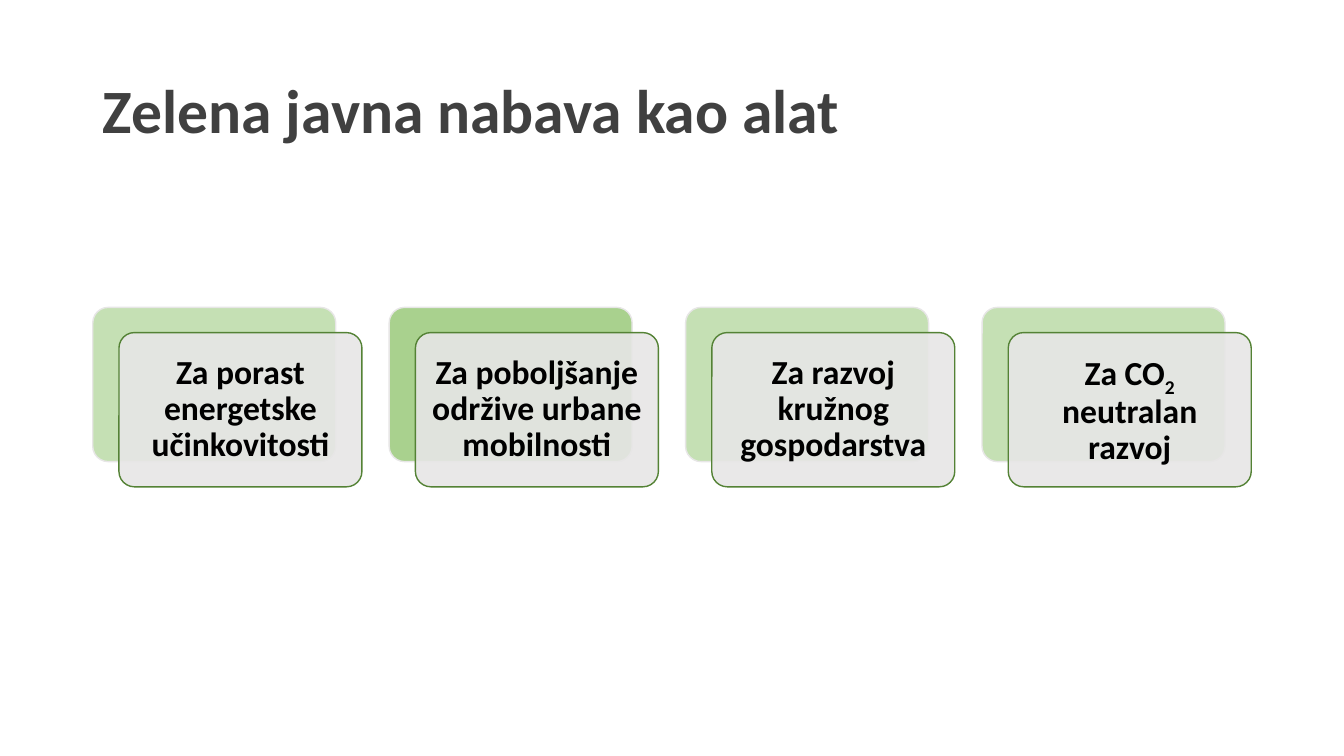
from lxml import etree
from pptx import Presentation
from pptx.dml.color import RGBColor
from pptx.enum.shapes import MSO_SHAPE
from pptx.enum.text import MSO_ANCHOR, PP_ALIGN
from pptx.oxml.ns import qn
from pptx.util import Emu, Pt

CARD_W, CARD_H = 241, 153
CARD_LEFT, CARD_TOP, CARD_STEP = 92, 305, 294
FRONT_DX, FRONT_DY = 26, 25
LIGHT_GREEN, MID_GREEN, DARK_GREEN = "C5E0B4", "A9D18E", "548235"
GRAY = "E7E6E6"
# Each card: back colour and text parts; every second part is a subscript.
CARDS = [
    (LIGHT_GREEN, ["Za porast energetske učinkovitosti"]),
    (MID_GREEN, ["Za poboljšanje održive urbane mobilnosti"]),
    (LIGHT_GREEN, ["Za razvoj kružnog gospodarstva"]),
    (LIGHT_GREEN, ["Za CO", "2", " neutralan razvoj"]),
]


def px(n):
    """Turn px (100 to the inch) into EMU."""
    return Emu(n * 9144)


def rgb(code):
    return RGBColor.from_string(code)


def format_run(r, size, color):
    r.font.name = "Calibri"
    r.font.size = Pt(size)
    r.font.bold = True
    r.font.color.rgb = rgb(color)


def add_title(s, text):
    title = s.shapes.title
    title.left, title.top, title.width, title.height = px(92), px(40), px(932), px(145)
    tf = title.text_frame
    tf.text = text
    tf.vertical_anchor = MSO_ANCHOR.MIDDLE
    p = tf.paragraphs[0]
    p.alignment = PP_ALIGN.LEFT
    p.line_spacing = 0.9
    format_run(p.runs[0], 44, "404040")


def add_panel(s, left, top, fill, line):
    sp = s.shapes.add_shape(MSO_SHAPE.ROUNDED_RECTANGLE,
                            px(left), px(top), px(CARD_W), px(CARD_H))
    sp.adjustments[0] = 0.1
    sp.shadow.inherit = False
    sp.fill.solid()
    sp.fill.fore_color.rgb = rgb(fill)
    sp.line.color.rgb = rgb(line)
    sp.line.width = Pt(1)
    return sp


def set_opacity(sp, percent):
    color = sp.fill._xPr.find(qn("a:solidFill"))[0]
    etree.SubElement(color, qn("a:alpha")).set("val", str(percent * 1000))


def add_card(s, left, back, parts):
    add_panel(s, left, CARD_TOP, back, GRAY)
    front = add_panel(s, left + FRONT_DX, CARD_TOP + FRONT_DY, GRAY, DARK_GREEN)
    set_opacity(front, 90)
    tf = front.text_frame
    tf.word_wrap = True
    tf.vertical_anchor = MSO_ANCHOR.MIDDLE
    tf.margin_left = tf.margin_right = tf.margin_top = tf.margin_bottom = px(10)
    p = tf.paragraphs[0]
    p.alignment = PP_ALIGN.CENTER
    p.line_spacing = 0.9
    for i, part in enumerate(parts):
        r = p.add_run()
        r.text = part
        format_run(r, 24, "000000")
        if i % 2:
            r.font._element.set("baseline", "-25000")


def main():
    prs = Presentation()
    prs.slide_width, prs.slide_height = px(1333), px(750)
    s = prs.slides.add_slide(prs.slide_layouts[5])
    add_title(s, "Zelena javna nabava kao alat")
    for i, (back, parts) in enumerate(CARDS):
        add_card(s, CARD_LEFT + i * CARD_STEP, back, parts)
    prs.save("out.pptx")


if __name__ == "__main__":
    main()
